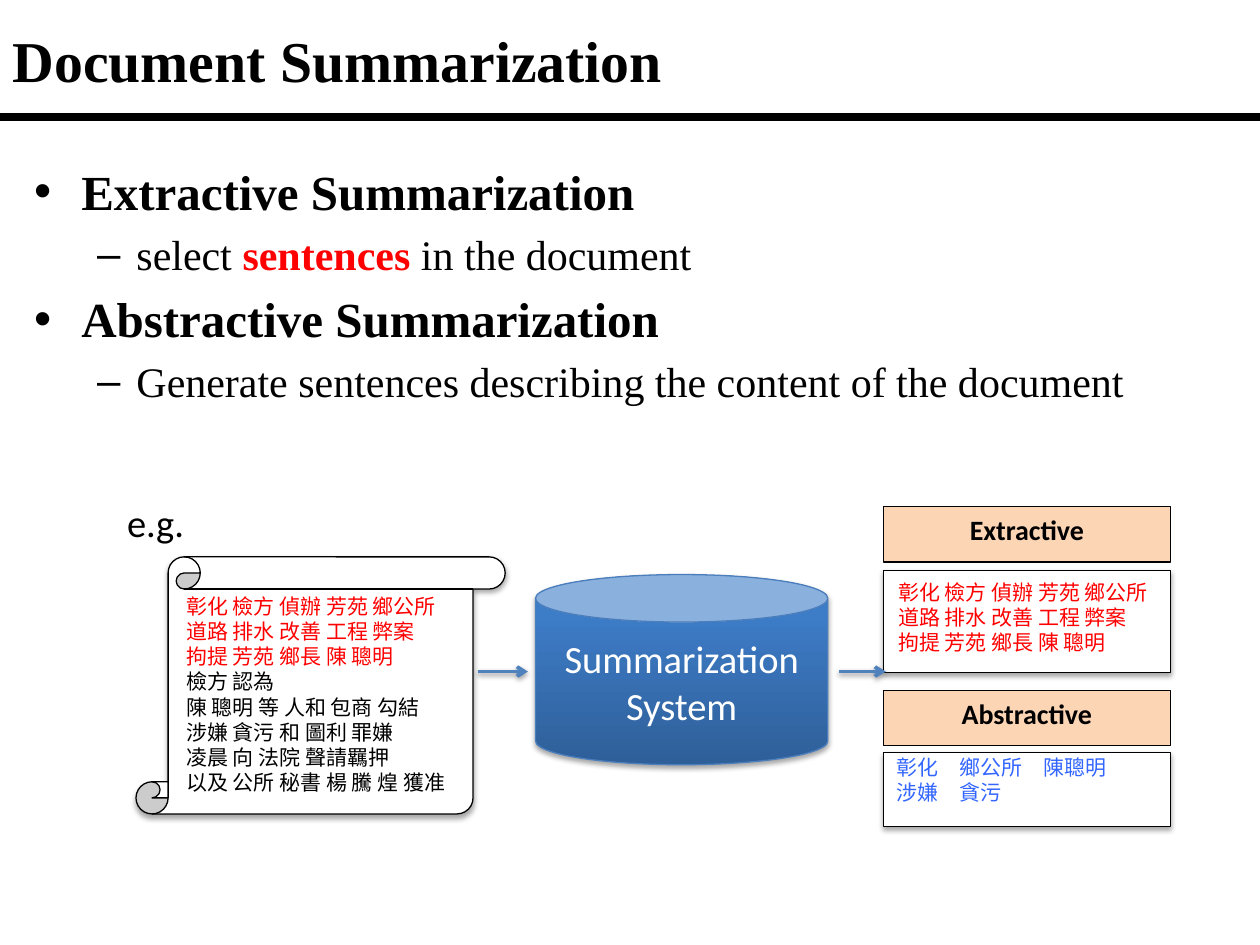
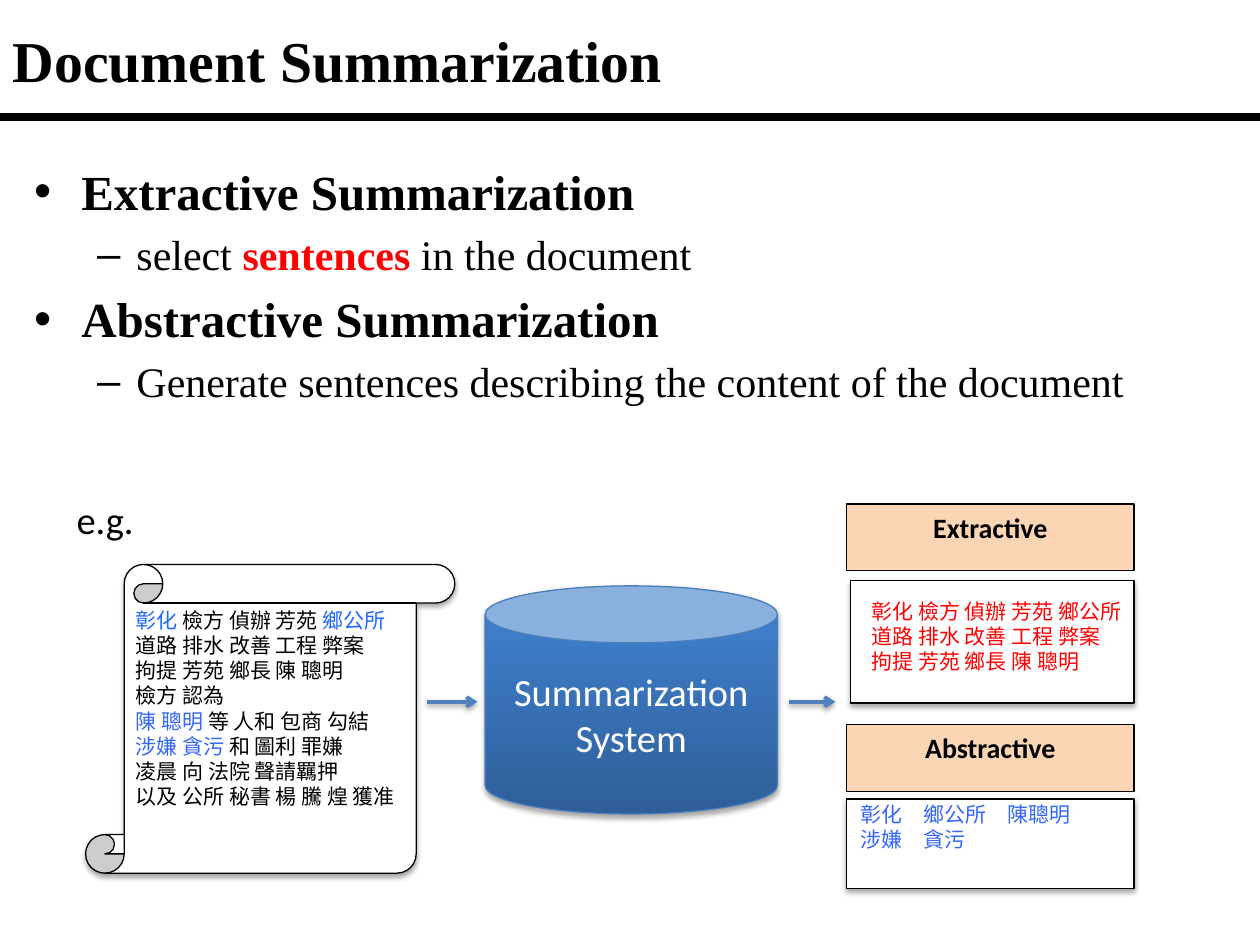
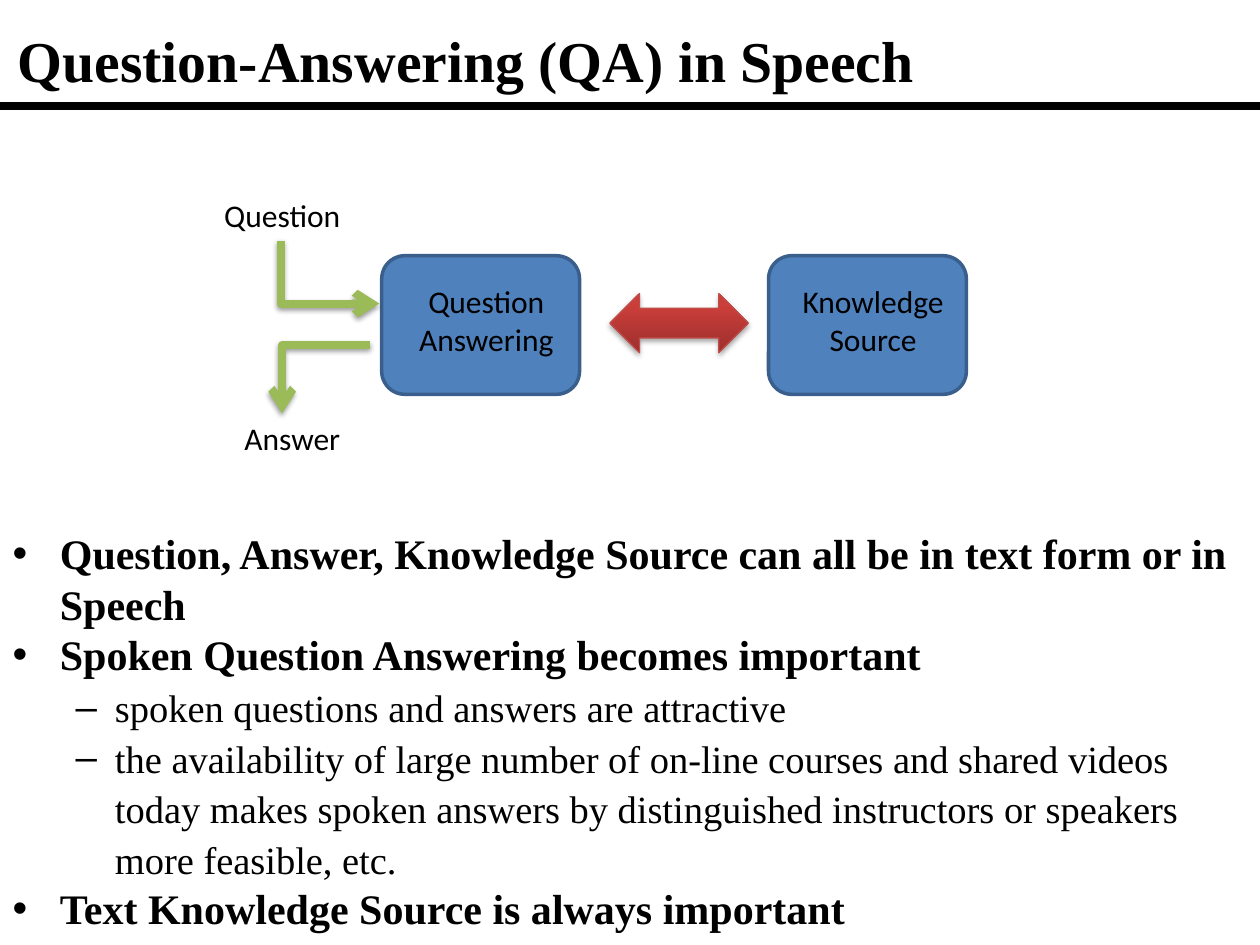
from copy import deepcopy
from dataclasses import dataclass
from typing import NamedTuple

from lxml.etree import SubElement
from pptx import Presentation
from pptx.dml.color import RGBColor
from pptx.enum.shapes import MSO_CONNECTOR, MSO_SHAPE
from pptx.enum.text import MSO_ANCHOR, MSO_AUTO_SIZE, PP_ALIGN
from pptx.oxml.ns import qn
from pptx.util import Inches, Pt


@dataclass(frozen=True)
class Theme:
    heading_font: str = "Times New Roman"
    diagram_font: str = "Calibri"
    black: str = "000000"
    white: str = "FFFFFF"
    red: str = "FF0000"
    blue: str = "3366FF"
    bright_blue: str = "1D68FF"
    peach: str = "FCD5B5"
    node_fill: str = "4F81BD"
    node_line: str = "3A5F8C"
    system_line: str = "4B7EBC"
    exchange_line: str = "BF4C48"
    green: str = "9BBB59"
    system_gradient: tuple = ("2F5F99", "3D7CC7", "3A7CCB")
    exchange_gradient: tuple = ("9C2F2D", "CB3E3A", "CE3B37")
    title_size: float = 33
    system_size: float = 22
    node_size: float = 18
    header_size: float = 16
    news_size: float = 12
    thin: float = 0.75
    medium: float = 2
    thick: float = 4.5


THEME = Theme()


class Box(NamedTuple):
    left: float
    top: float
    width: float
    height: float

    def inches(self):
        return [Inches(round(length, 2)) for length in self]

    def inside(self, left, top, width, height):
        return Box(self.left + left, self.top + top, width, height)


# Text
def write_paragraph(paragraph, content, size, font=THEME.diagram_font,
                    color=THEME.black, bold=False, align=PP_ALIGN.LEFT):
    """Content is a string, or a list of (text, color, bold) parts."""
    parts = [(content, color, bold)] if isinstance(content, str) else content
    if len(parts) == 1:
        paragraph.text = parts[0][0]
    else:
        for text, *_ in parts:
            paragraph.add_run().text = text
        
    paragraph.alignment = align
    for index, run in enumerate(paragraph.runs):
        _, part_color, part_bold = parts[min(index, len(parts) - 1)]
        run.font.name = font
        run.font.size = Pt(size)
        run.font.bold = part_bold
        run.font.color.rgb = RGBColor.from_string(part_color)


def write_lines(frame, lines, size, **style):
    frame.word_wrap = True
    for index, line in enumerate(lines):
        paragraph = frame.paragraphs[0] if index == 0 else frame.add_paragraph()
        write_paragraph(paragraph, line, size, **style)


def add_label(slide, box, lines, size, **style):
    label = slide.shapes.add_textbox(*box.inches())
    write_lines(label.text_frame, lines, size, **style)


# Shapes and lines
def add_soft_shadow(sp_pr, alpha=35, distance=1.8):
    effects = sp_pr.find(qn("a:effectLst"))
    shadow = SubElement(effects, qn("a:outerShdw"), blurRad=str(Pt(3.1)),
                        dist=str(Pt(distance)), dir="5400000", rotWithShape="0")
    color = SubElement(shadow, qn("a:srgbClr"), val=THEME.black)
    SubElement(color, qn("a:alpha"), val=str(alpha * 1000))


def add_block(slide, kind, box, fill, line, width=THEME.thin, shadow=False):
    block = slide.shapes.add_shape(kind, *box.inches())
    if isinstance(fill, str):
        block.fill.solid()
        block.fill.fore_color.rgb = RGBColor.from_string(fill)
    else:
        block.fill.gradient()
        block.fill.gradient_angle = 90
        stops = block._element.spPr.find(".//" + qn("a:gsLst"))
        stops.append(deepcopy(stops[-1]))
        for stop, position, color in zip(block.fill.gradient_stops, (0, 0.8, 1), fill):
            stop.position = position
            stop.color.rgb = RGBColor.from_string(color)
    block.line.color.rgb = RGBColor.from_string(line)
    block.line.width = Pt(width)
    block.shadow.inherit = False
    if shadow:
        add_soft_shadow(block._element.spPr)
    return block


def add_line(slide, start, end, color, width, kind=MSO_CONNECTOR.STRAIGHT, arrow=False):
    points = [Inches(round(length, 2)) for length in (*start, *end)]
    line = slide.shapes.add_connector(kind, *points)
    line.line.color.rgb = RGBColor.from_string(color)
    line.line.width = Pt(width)
    if arrow:
        SubElement(line.line._get_or_add_ln(), qn("a:tailEnd"), type="arrow")
    sp_pr = line._element.spPr
    SubElement(sp_pr, qn("a:effectLst"))
    if arrow:
        add_soft_shadow(sp_pr, alpha=38, distance=1.6)
    return line


def add_elbow(slide, start, end, down_first=False):
    """One-bend arrow; a quarter turn of its frame makes it leave downwards."""
    (x1, y1), (x2, y2) = start, end
    if down_first:
        x, y = (x1 + x2) / 2, (y1 + y2) / 2
        half_width, half_height = (x2 - x1) / 2, (y2 - y1) / 2
        start = x + half_height, y - half_width
        end = x - half_height, y + half_width
    elbow = add_line(slide, start, end, THEME.green, THEME.thick,
                     MSO_CONNECTOR.ELBOW, arrow=True)
    sp_pr = elbow._element.spPr
    sp_pr.find(qn("a:prstGeom")).set("prst", "bentConnector2")
    if down_first:
        sp_pr.find(qn("a:xfrm")).set("rot", "16200000")


# Title, rule and list
def start_slide(deck, title, title_box, rule_top):
    slide = deck.slides.add_slide(deck.slide_layouts[1])
    heading = slide.shapes.title
    heading.left, heading.top, heading.width, heading.height = title_box.inches()
    frame = heading.text_frame
    frame.auto_size = MSO_AUTO_SIZE.NONE
    frame.vertical_anchor = MSO_ANCHOR.MIDDLE
    write_lines(frame, [title], THEME.title_size, font=THEME.heading_font, bold=True)
    add_line(slide, (0, rule_top), (10, rule_top), THEME.black, THEME.thick)
    return slide


def fill_list(slide, box, items, sizes, compact=False):
    body = slide.placeholders[1]
    body.left, body.top, body.width, body.height = box.inches()
    frame = body.text_frame
    frame.auto_size = MSO_AUTO_SIZE.NONE
    write_lines(frame, [content for _, content in items], sizes[0])
    for paragraph, (level, content) in zip(frame.paragraphs, items):
        paragraph.level = level
        for run in paragraph.runs:
            run.font.name = THEME.heading_font
            run.font.size = Pt(sizes[level])
            run.font.bold = run.font.bold or level == 0
        if compact:
            paragraph.space_before = Pt(0)
            if level:
                paragraph.line_spacing = 1.1


# Summarization example
NEWS = [
    "彰化 檢方 偵辦 芳苑 鄉公所",
    "道路 排水 改善 工程 弊案",
    "拘提 芳苑 鄉長 陳 聰明",
    "檢方 認為",
    "陳 聰明 等 人和 包商 勾結",
    "涉嫌 貪污 和 圖利 罪嫌",
    "凌晨 向 法院 聲請羈押",
    "以及 公所 秘書 楊 騰 煌 獲准",
]
EXTRACT = NEWS[:3]
ABSTRACT = ["彰化　鄉公所　陳聰明", "涉嫌　貪污"]

SENTENCES_MARKED = [[(line, THEME.red, False)] for line in EXTRACT] + NEWS[3:]
WORDS_MARKED = [
    [("彰化 ", THEME.bright_blue, False), ("檢方 偵辦 芳苑 ", THEME.black, False),
     ("鄉公所", THEME.bright_blue, False)],
    *NEWS[1:4],
    [("陳 聰明", THEME.blue, False), (" 等 人和 包商 勾結", THEME.black, False)],
    [("涉嫌 貪污 ", THEME.blue, False), ("和 圖利 罪嫌", THEME.black, False)],
    *NEWS[6:],
]


def draw_summary_flow(slide, box, news, results_left, panel_shift, extract_shift):
    stretch = box.height / 2.54

    def part(left, top, width, height):
        return box.inside(left, top * stretch, width, height * stretch)

    # Source document
    add_label(slide, box.inside(0, -0.11, 0.95, 0.48), ["e.g."], THEME.system_size)
    add_block(slide, MSO_SHAPE.VERTICAL_SCROLL, part(0.17, 0.4, 2.93, 2.04),
              THEME.white, THEME.black, shadow=True)
    add_label(slide, part(0.47, 0.64, 2.37, 1.74), news, THEME.news_size)

    # System
    system = add_block(slide, MSO_SHAPE.CAN, part(3.34, 0.54, 2.32, 1.51),
                       THEME.system_gradient, THEME.system_line, shadow=True)
    system.text_frame.vertical_anchor = MSO_ANCHOR.MIDDLE
    write_lines(system.text_frame, ["Summarization\nSystem"], THEME.system_size,
                color=THEME.white, align=PP_ALIGN.CENTER)

    # Results: header, panel and summary for each method
    results = [
        ("Extractive", 0, 0.51, 0.81, panel_shift, EXTRACT, THEME.red, extract_shift),
        ("Abstractive", 1.46, 1.95, 0.59, 0, ABSTRACT, THEME.blue, (0.01, -0.03)),
    ]
    for method, top, panel_top, height, shift, summary, color, (dx, dy) in results:
        panel = part(results_left + shift, panel_top, 2.28 - shift, height)
        add_block(slide, MSO_SHAPE.FLOWCHART_PROCESS, panel,
                  THEME.white, THEME.black, shadow=True)
        add_label(slide, Box(results_left + box.left + dx, panel.top + dy, 2.28, panel.height),
                  summary, THEME.news_size, color=color)
        header = add_block(slide, MSO_SHAPE.RECTANGLE, part(results_left, top, 2.28, 0.44),
                           THEME.peach, THEME.black)
        header.text_frame.vertical_anchor = MSO_ANCHOR.TOP
        write_lines(header.text_frame, [method], THEME.header_size,
                    bold=True, align=PP_ALIGN.CENTER)

    # Flow arrows
    flow_top = box.top + 1.31 * stretch
    for left, right in ((2.88, 3.28), (5.75, 6.12)):
        add_line(slide, (box.left + left, flow_top), (box.left + right, flow_top),
                 THEME.node_fill, THEME.medium, arrow=True)


def build_summarization(deck, flow_box, **flow):
    slide = start_slide(deck, "Document Summarization", Box(0, 0.08, 9.99, 0.79), 0.93)
    fill_list(slide, Box(0.17, 1.23, 9.56, 2.11), [
        (0, "Extractive Summarization"),
        (1, [("select ", THEME.black, False), ("sentences", THEME.red, True),
             (" in the document", THEME.black, False)]),
        (0, "Abstractive Summarization"),
        (1, "Generate sentences describing the content of the document"),
    ], sizes=(28, 24))
    draw_summary_flow(slide, flow_box, **flow)


# Question answering
def draw_answering_flow(slide, box):
    for left, lines in ((1.49, ["Question", "Answering"]), (4.56, ["Knowledge", "Source"])):
        node = box.inside(left, 0.52, 1.57, 1.1)
        add_block(slide, MSO_SHAPE.ROUNDED_RECTANGLE, node,
                  THEME.node_fill, THEME.node_line, THEME.medium)
        add_label(slide, node.inside(0.08, 0.16, 1.5, 0.71), lines,
                  THEME.node_size, align=PP_ALIGN.CENTER)
    add_block(slide, MSO_SHAPE.LEFT_RIGHT_ARROW, box.inside(3.3, 0.82, 1.1, 0.47),
              THEME.exchange_gradient, THEME.exchange_line, shadow=True)

    # Input and output
    for left, top, text in ((0, 0, "Question"), (0.08, 1.77, "Answer")):
        add_label(slide, box.inside(left, top, 1.4, 0.4), [text],
                  THEME.node_size, align=PP_ALIGN.CENTER)
    x, y = box.left, box.top
    add_elbow(slide, (x + 0.69, y + 0.4), (x + 1.47, y + 0.9), down_first=True)
    add_elbow(slide, (x + 1.4, y + 1.23), (x + 0.7, y + 1.77))


def build_question_answering(deck):
    slide = start_slide(deck, "Question-Answering (QA) in Speech",
                        Box(0.04, 0.13, 9.96, 0.69), 0.84)
    draw_answering_flow(slide, Box(1.54, 1.51, 6.13, 2.17))
    fill_list(slide, Box(0, 4.14, 10, 3.35), [
        (0, "Question, Answer, Knowledge Source can all be in text form or in Speech"),
        (0, "Spoken Question Answering becomes important"),
        (1, "spoken questions and answers are attractive"),
        (1, "the availability of large number of on-line courses and shared videos today "
            "makes spoken answers by distinguished instructors or speakers more feasible, etc."),
        (0, "Text Knowledge Source is always important"),
    ], sizes=(24, 22), compact=True)


def main():
    deck = Presentation()
    deck.slide_width, deck.slide_height = Inches(10), Inches(7.5)
    build_summarization(deck, Box(0.91, 4.02, 8.39, 2.54), news=SENTENCES_MARKED,
                        results_left=6.1, panel_shift=0, extract_shift=(0.02, 0.02))
    build_summarization(deck, Box(0.51, 4, 8.49, 3.05), news=WORDS_MARKED,
                        results_left=6.21, panel_shift=0.03, extract_shift=(0.1, 0.09))
    build_question_answering(deck)
    deck.save("out.pptx")


if __name__ == "__main__":
    main()
